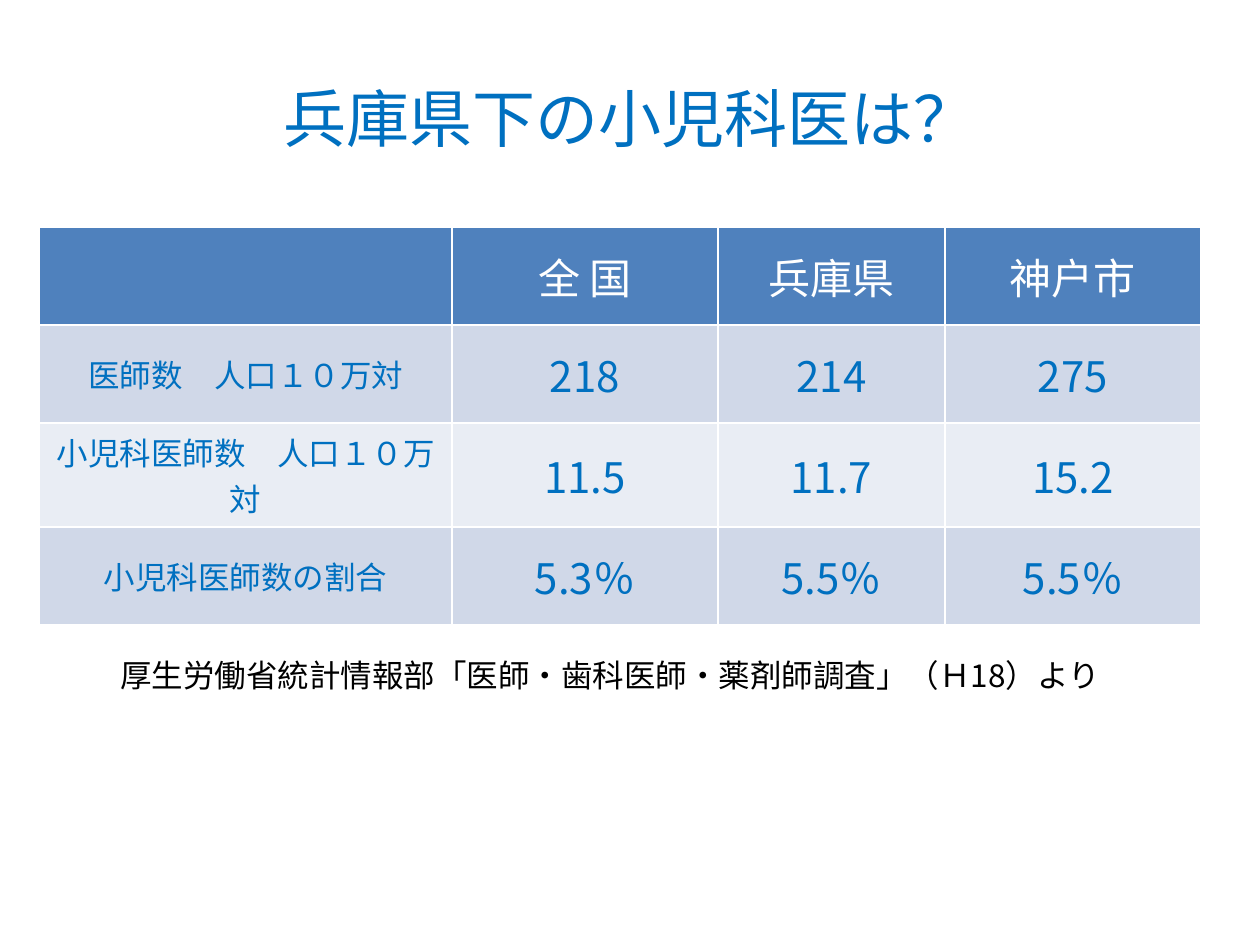
"""Builds a slide comparing paediatrician numbers in Japan, Hyogo and Kobe."""
from lxml import etree
from pptx import Presentation
from pptx.dml.color import RGBColor
from pptx.enum.text import MSO_ANCHOR, PP_ALIGN
from pptx.oxml.ns import qn
from pptx.util import Emu, Pt

CENTER, LEFT = PP_ALIGN.CENTER, PP_ALIGN.LEFT
MIDDLE = MSO_ANCHOR.MIDDLE
TITLE_ONLY = 5
FONT = "Noto Sans CJK JP"
COLORS = {"blue": "0070C0", "header": "4F81BD", "band": "D0D8E8",
          "light": "E9EDF4", "white": "FFFFFF", "black": "000000"}

TITLE = "兵庫県下の小児科医は？"
ROWS = [
    ("", "全 国", "兵庫県", "神戸市"),
    ("医師数　人口１０万対", "218", "214", "275"),
    ("小児科医師数　人口１０万対", "11.5", "11.7", "15.2"),
    ("小児科医師数の割合", "5.3％", "5.5％", "5.5％"),
]
SOURCE = "厚生労働省統計情報部「医師・歯科医師・薬剤師調査」（Ｈ18）より"
COLUMN_WIDTHS = (413, 266, 227, 256)
ROW_HEIGHT = 98


def px(length):
    return Emu(round(length * 914400 / 126))


def write(frame, text, size, color, align=CENTER):
    frame.text = text
    paragraph = frame.paragraphs[0]
    paragraph.alignment = align
    font = paragraph.font
    font.name, font.size = FONT, Pt(size)
    font.color.rgb = RGBColor.from_string(COLORS[color])
    latin = paragraph._p.find(".//" + qn("a:latin"))
    east_asian = etree.Element(qn("a:ea"), typeface=FONT)
    latin.addnext(east_asian)


def place(shape, left, top, width, height):
    shape.left, shape.top = px(left), px(top)
    shape.width, shape.height = px(width), px(height)


def add_statistics(slide):
    statistics = slide.shapes.add_table(
        len(ROWS), len(COLUMN_WIDTHS), px(39), px(227),
        px(sum(COLUMN_WIDTHS)), px(ROW_HEIGHT * len(ROWS))).table
    for column, width in zip(statistics.columns, COLUMN_WIDTHS):
        column.width = px(width)
    for r, values in enumerate(ROWS):
        statistics.rows[r].height = px(ROW_HEIGHT)
        fill = "header" if r == 0 else "band" if r % 2 else "light"
        for c, value in enumerate(values):
            cell = statistics.cell(r, c)
            cell.vertical_anchor = MIDDLE
            cell.fill.solid()
            cell.fill.fore_color.rgb = RGBColor.from_string(COLORS[fill])
            write(cell.text_frame, value, 24 if c else 18,
                  "blue" if r else "white")
            cell.text_frame.paragraphs[0].font.bold = False


def main():
    deck = Presentation()
    deck.slide_width, deck.slide_height = px(1260), px(945)
    slide = deck.slides.add_slide(deck.slide_layouts[TITLE_ONLY])

    title = slide.shapes.title
    place(title, 63, 38, 1134, 158)
    title.text_frame.vertical_anchor = MIDDLE
    write(title.text_frame, TITLE, 36, "blue")

    add_statistics(slide)

    source = slide.shapes.add_textbox(px(108), px(650), px(1063), px(50))
    source.text_frame.word_wrap = True
    write(source.text_frame, SOURCE, 18, "black", LEFT)

    deck.save("out.pptx")


if __name__ == "__main__":
    main()
